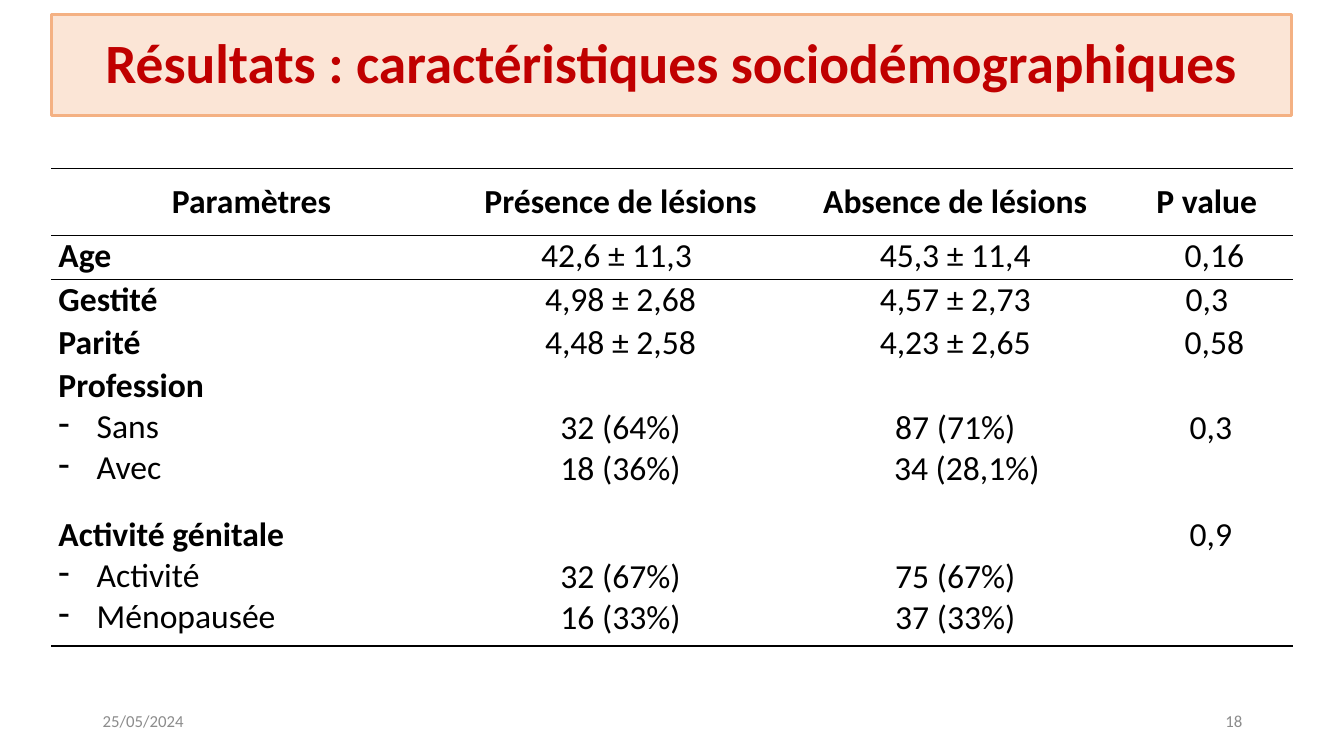
from dataclasses import dataclass

from lxml.etree import SubElement
from pptx import Presentation
from pptx.dml.color import RGBColor
from pptx.enum.shapes import MSO_SHAPE
from pptx.enum.text import MSO_ANCHOR as Anchor, PP_ALIGN as Align
from pptx.oxml import parse_xml
from pptx.oxml.ns import nsdecls, qn
from pptx.util import Inches, Pt

BLACK = RGBColor(0x00, 0x00, 0x00)
RED = RGBColor(0xC0, 0x00, 0x00)
GREY = RGBColor(0x8C, 0x8C, 0x8C)
PEACH = RGBColor(0xFB, 0xE5, 0xD6)
ORANGE = RGBColor(0xF4, 0xB1, 0x83)

FONT = "Calibri"
PLAIN_STYLE = "{2D5ABB26-0587-4C30-8999-92F81FD0307C}"
LEFT, TABLE_TOP = 0.51, 1.67
COLUMN_WIDTHS = [3.97, 3.35, 3.29, 1.7]
CELL_MARGIN = 0.07
LINE_HEIGHT = 0.41
BULLET_INDENT = 0.38


@dataclass
class Line:
    """One line of a cell; a positive nudge moves it right, a negative one left."""
    text: str
    nudge: float = 0
    bold: bool = False
    bullet: bool = False


@dataclass
class Cell:
    lines: list[Line]
    skipped_lines: int = 0


@dataclass
class Row:
    height: float
    cells: list[Cell]
    rules: tuple[str, ...] = ()


def heading(text: str) -> Cell:
    return Cell([Line(text, bold=True)])


def value(text: str, nudge: float = 0) -> Cell:
    return Cell([Line(text, nudge)])


def group(title: str, *items: str) -> Cell:
    return Cell([Line(title, bold=True)] + [Line(item, bullet=True) for item in items])


def counts(*lines: Line) -> Cell:
    return Cell(list(lines), skipped_lines=1)


ROWS = [
    Row(0.67, [heading(text) for text in
               ("Paramètres", "Présence de lésions", "Absence de lésions", "P value")],
        rules=("T", "B")),
    Row(0.43, [heading("Age"), value("42,6 ± 11,3", -0.08),
               value("45,3 ± 11,4"), value("0,16", 0.15)], rules=("T",)),
    Row(0.43, [heading("Gestité"), value("4,98 ± 2,68"),
               value("4,57 ± 2,73"), value("0,3")]),
    Row(0.43, [heading("Parité"), value("4,48 ± 2,58"),
               value("4,23 ± 2,65"), value("0,58", 0.15)]),
    Row(1.48, [group("Profession", "Sans", "Avec"),
               counts(Line("32 (64%)"), Line("18 (36%)")),
               counts(Line("87 (71%)"), Line("34 (28,1%)", 0.23)),
               counts(Line("0,3", 0.08))]),
    Row(1.3, [group("Activité génitale", "Activité", "Ménopausée"),
              counts(Line("32 (67%)"), Line("16 (33%)")),
              counts(Line("75 (67%)"), Line("37 (33%)")),
              value("0,9", 0.08)], rules=("B",)),
]


def write(paragraph, text: str, *, size: float, color: RGBColor = BLACK,
          bold: bool = False, align: Align = Align.LEFT) -> None:
    paragraph.alignment = align
    run = paragraph.add_run()
    run.text = text
    run.font.name = FONT
    run.font.size = Pt(size)
    run.font.bold = bold
    run.font.color.rgb = color


def indent(paragraph, line: Line) -> None:
    properties = paragraph._p.get_or_add_pPr()
    if line.bullet:
        properties.set("marL", str(Inches(BULLET_INDENT)))
        properties.set("indent", str(Inches(-BULLET_INDENT)))
        SubElement(properties, qn("a:buChar")).set("char", "-")
    elif line.nudge:
        side = "marL" if line.nudge > 0 else "marR"
        properties.set(side, str(Inches(abs(line.nudge))))


def add_rules(table_cell, sides: tuple[str, ...]) -> None:
    properties = table_cell._tc.get_or_add_tcPr()
    for index, side in enumerate(sides):
        properties.insert(index, parse_xml(
            f'<a:ln{side} {nsdecls("a")} w="{Pt(1)}"><a:solidFill>'
            f'<a:srgbClr val="{BLACK}"/></a:solidFill></a:ln{side}>'))


def fill_cell(table_cell, cell: Cell, row: Row, align: Align, anchor: Anchor) -> None:
    table_cell.fill.background()
    table_cell.vertical_anchor = anchor
    table_cell.margin_left = table_cell.margin_right = Inches(CELL_MARGIN)
    table_cell.margin_top = Inches(cell.skipped_lines * LINE_HEIGHT)
    table_cell.margin_bottom = 0
    add_rules(table_cell, row.rules)
    frame = table_cell.text_frame
    for index, line in enumerate(cell.lines):
        paragraph = frame.add_paragraph() if index else frame.paragraphs[0]
        indent(paragraph, line)
        write(paragraph, line.text, size=24, bold=line.bold, align=align)


def add_results_table(slide) -> None:
    table = slide.shapes.add_table(
        len(ROWS), len(COLUMN_WIDTHS), Inches(LEFT), Inches(TABLE_TOP),
        Inches(sum(COLUMN_WIDTHS)), Inches(sum(row.height for row in ROWS))).table
    table._tbl.tblPr.find(qn("a:tableStyleId")).text = PLAIN_STYLE
    table.horz_banding = False
    for column, width in zip(table.columns, COLUMN_WIDTHS):
        column.width = Inches(width)
    for row_index, row in enumerate(ROWS):
        table.rows[row_index].height = Inches(row.height)
        for column_index, cell in enumerate(row.cells):
            is_label = row_index > 0 and column_index == 0
            fill_cell(table.cell(row_index, column_index), cell, row,
                      Align.LEFT if is_label else Align.CENTER,
                      Anchor.TOP if row_index else Anchor.MIDDLE)


def add_title(slide, text: str) -> None:
    shape = slide.shapes.add_shape(MSO_SHAPE.RECTANGLE, Inches(LEFT), Inches(0.14),
                                   Inches(12.3), Inches(1.01))
    shape.shadow.inherit = False
    shape.fill.solid()
    shape.fill.fore_color.rgb = PEACH
    shape.line.color.rgb = ORANGE
    shape.line.width = Pt(2)
    shape.text_frame.vertical_anchor = Anchor.MIDDLE
    paragraph = shape.text_frame.paragraphs[0]
    paragraph.line_spacing = 0.9
    write(paragraph, text, size=39.6, color=RED, bold=True, align=Align.CENTER)


def add_footer(slide, text: str, left: float, align: Align) -> None:
    box = slide.shapes.add_textbox(Inches(left), Inches(6.95), Inches(3), Inches(0.4))
    box.text_frame.word_wrap = True
    box.text_frame.vertical_anchor = Anchor.MIDDLE
    write(box.text_frame.paragraphs[0], text, size=12, color=GREY, align=align)


def main() -> None:
    presentation = Presentation()
    presentation.slide_width = Inches(13.33)
    presentation.slide_height = Inches(7.5)
    slide = presentation.slides.add_slide(presentation.slide_layouts[6])

    # Title banner
    add_title(slide, "Résultats : caractéristiques sociodémographiques")

    # Results table
    add_results_table(slide)

    # Date and slide number
    add_footer(slide, "25/05/2024", 0.92, Align.LEFT)
    add_footer(slide, "18", 9.42, Align.RIGHT)

    presentation.save("out.pptx")


if __name__ == "__main__":
    main()
